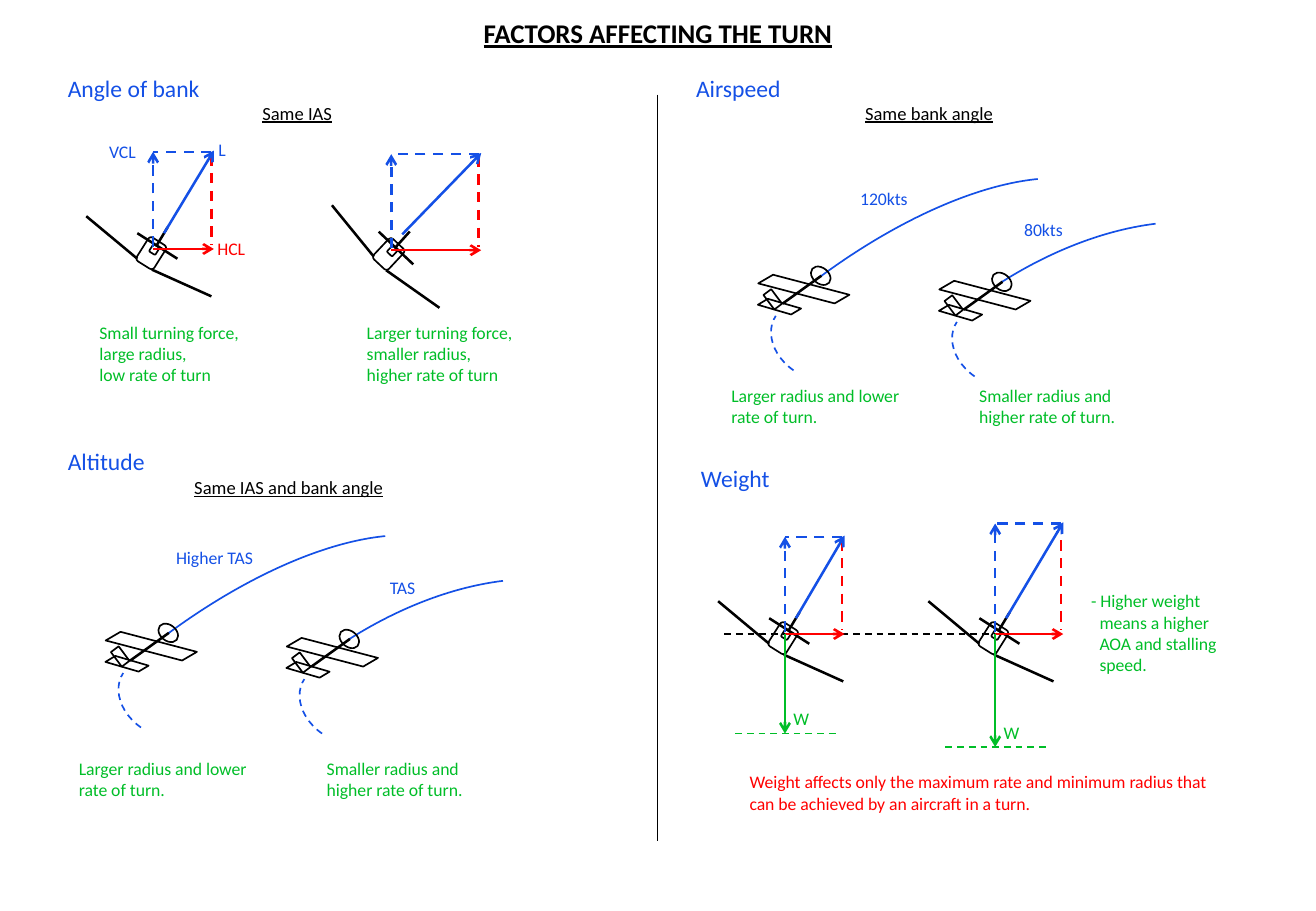
from math import cos, radians, sin

from lxml import etree
from pptx import Presentation
from pptx.dml.color import RGBColor
from pptx.enum.dml import MSO_LINE
from pptx.enum.shapes import MSO_CONNECTOR, MSO_SHAPE
from pptx.enum.text import MSO_AUTO_SIZE, PP_ALIGN
from pptx.oxml.ns import qn
from pptx.util import Inches, Pt

BLACK = RGBColor(0x00, 0x00, 0x00)
BLUE = RGBColor(0x14, 0x50, 0xE6)
GREEN = RGBColor(0x00, 0xBE, 0x28)
RED = RGBColor(0xFF, 0x00, 0x00)
DASH = MSO_LINE.DASH
STRAIGHT = MSO_CONNECTOR.STRAIGHT
ARC = MSO_SHAPE.ARC
ELLIPSE = MSO_SHAPE.OVAL
PARALLELOGRAM = MSO_SHAPE.PARALLELOGRAM
RECT = MSO_SHAPE.RECTANGLE
ROUND_RECT = MSO_SHAPE.ROUNDED_RECTANGLE
CENTER = PP_ALIGN.CENTER
GROW = MSO_AUTO_SIZE.SHAPE_TO_FIT_TEXT

FONT = "Calibri"
BANK = 32.3
STEEP_BANK = 43.3
TAIL_ARC = (162.15, 215.75)
FAST_PATH = (5.48, 2.44, 319.6, (173.29, 206.45))
SLOW_PATH = (4.26, 2.44, 326, (164.53, 196.44))


class TurnSlide:
    def __init__(self, prs):
        self.s = prs.slides.add_slide(prs.slide_layouts[6])

    def text(self, x, y, w, h, text, color, size=10.5, bold=False,
             underline=False, align=None, hanging=0):
        sp = self.s.shapes.add_textbox(Inches(x), Inches(y), Inches(w), Inches(h))
        tf = sp.text_frame
        tf.word_wrap = True
        tf.auto_size = GROW
        tf.text = text
        for i, p in enumerate(tf.paragraphs):
            p.alignment = align
            if hanging and i:
                p._p.get_or_add_pPr().set("marL", str(Inches(hanging)))
            for r in p.runs:
                r.font.name = FONT
                r.font.size = Pt(size)
                r.font.bold = bold
                r.font.underline = underline
                r.font.color.rgb = color

    def stroke(self, line, color, width, dash):
        line.color.rgb = color
        line.width = Pt(width)
        if dash:
            line.dash_style = DASH

    def line(self, x1, y1, x2, y2, color=BLACK, width=1.5, dash=False, arrow=False):
        sp = self.s.shapes.add_connector(
            STRAIGHT, Inches(x1), Inches(y1), Inches(x2), Inches(y2))
        self.stroke(sp.line, color, width, dash)
        if arrow:
            etree.SubElement(sp.line._get_or_add_ln(), qn("a:tailEnd"), type="arrow")
        etree.SubElement(sp._element.spPr, qn("a:effectLst"))

    def shape(self, kind, x, y, w, h, rotation, adjustments=(), color=BLACK, dash=False):
        sp = self.s.shapes.add_shape(kind, Inches(x), Inches(y), Inches(w), Inches(h))
        sp.shadow.inherit = False
        sp.rotation = rotation
        sp.fill.background()
        self.stroke(sp.line, color, 1, dash)
        for i, value in enumerate(adjustments):
            sp.adjustments[i] = value

    def banked_aircraft(self, x, y, bank):
        turn = radians(bank - BANK)

        def rolled(dx, dy):
            return (x + dx * cos(turn) - dy * sin(turn),
                    y + dx * sin(turn) + dy * cos(turn))

        right_wing = (-0.01, 0.17), (0.48, 0.39)
        left_wing = (-0.55, -0.27), (-0.13, 0.08)
        tailplane = (-0.13, -0.13), (0.2, 0.08)
        fin = (0.12, -0.18), (0.03, -0.03)
        for start, end in (right_wing, left_wing, tailplane, fin):
            self.line(*rolled(*start), *rolled(*end))
        for dx, dy, w, h in ((-0.015, 0.035, 0.17, 0.23), (0.01, 0.005, 0.06, 0.07)):
            cx, cy = rolled(dx, dy)
            self.shape(ROUND_RECT, cx - w / 2, cy - h / 2, w, h, bank)

    def lift_forces(self, x, y, w, h):
        side, top = x + w - 0.02, y - h + 0.01
        self.line(side, y - 0.77, side, y - 0.03, RED, dash=True)
        self.line(x, y - 0.02, x, top, BLUE, dash=True, arrow=True)
        self.line(x + 0.09, y - 0.13, x + w, y - h, BLUE, arrow=True)
        self.line(x, y, x + w, y, RED, arrow=True)
        self.line(side, top, x, top, BLUE, dash=True)

    def weight_force(self, x, y, length):
        end = y + length
        self.line(x, y, x, end, GREEN, arrow=True)
        self.line(x - 0.41, end, x + 0.42, end, GREEN, width=1, dash=True)
        self.text(x - 0.03, end - 0.26, 0.49, 0.29, "W", GREEN)

    def turning_aircraft(self, x, y, path_dx, path_dy, path):
        w, h, rotation, sweep = path
        self.shape(ARC, x + path_dx, y + path_dy, w, h, rotation, sweep, BLUE)
        self.shape(ARC, x + 0.08, y + 0.19, 0.75, 0.58, 214.4, TAIL_ARC, BLUE, True)
        self.shape(ELLIPSE, x + 0.45, y - 0.15, 0.13, 0.18, 309.6)
        self.shape(PARALLELOGRAM, x, y, 0.75, 0.1, 14.7, (1,))
        self.shape(PARALLELOGRAM, x, y + 0.16, 0.35, 0.07, 16.3, (0.93,))
        self.shape(RECT, x + 0.08, y + 0.06, 0.08, 0.15, 323.2)
        self.line(x + 0.52, y - 0.06, x + 0.2, y + 0.17)

    def turn_pair(self, x, y, note_y):
        self.turning_aircraft(x, y, -1.77, -0.08, FAST_PATH)
        self.turning_aircraft(x + 1.49, y + 0.05, -1.02, -0.21, SLOW_PATH)
        self.text(x - 0.32, note_y, 1.68, 0.47,
                  "Larger radius and lower rate of turn.", GREEN)
        self.text(x + 1.72, note_y, 1.68, 0.47,
                  "Smaller radius and higher rate of turn.", GREEN)


def main():
    prs = Presentation()
    prs.slide_width = Inches(10.83)
    prs.slide_height = Inches(7.5)
    slide = TurnSlide(prs)

    slide.text(0, 0.09, 10.83, 0.37, "FACTORS AFFECTING THE TURN", BLACK, 16,
               bold=True, underline=True, align=CENTER)
    slide.line(5.41, 0.78, 5.41, 6.92, width=1)

    for x, y, heading in ((0.46, 0.56, "Angle of bank"), (0.46, 3.63, "Altitude"),
                          (5.63, 0.56, "Airspeed"), (5.67, 3.77, "Weight")):
        slide.text(x, y, 1.83, 0.34, heading, BLUE, 14)
    for x, y, condition in ((2.06, 0.79, "Same IAS"), (7.02, 0.79, "Same bank angle"),
                            (1.5, 3.87, "Same IAS and bank angle")):
        slide.text(x, y, 2.51, 0.29, condition, BLACK, 11, underline=True)

    slide.line(5.96, 5.22, 8.19, 5.22, width=1, dash=True)
    for x, y, bank, w, h in ((1.26, 2.05, BANK, 0.5, 0.81),
                             (3.22, 2.06, STEEP_BANK, 0.74, 0.8),
                             (6.46, 5.22, BANK, 0.49, 0.81),
                             (8.19, 5.22, BANK, 0.56, 0.92)):
        slide.banked_aircraft(x, y, bank)
        slide.lift_forces(x, y, w, h)
    slide.weight_force(6.46, 5.22, 0.82)
    slide.weight_force(8.19, 5.22, 0.93)

    slide.turn_pair(0.87, 5.27, 6.19)
    slide.turn_pair(6.24, 2.33, 3.12)

    for x, y, w, label, color in ((0.8, 1.11, 0.49, "VCL", BLUE),
                                  (1.7, 1.09, 0.3, "L", BLUE),
                                  (1.69, 1.91, 0.49, "HCL", RED),
                                  (1.35, 4.45, 1.19, "Higher TAS", BLUE),
                                  (3.11, 4.7, 0.64, "TAS", BLUE),
                                  (6.98, 1.5, 1.19, "120kts", BLUE),
                                  (8.33, 1.75, 0.65, "80kts", BLUE)):
        slide.text(x, y, w, 0.29, label, color)

    slide.text(0.72, 2.6, 1.64, 0.63,
               "Small turning force,\nlarge radius,\nlow rate of turn", GREEN)
    slide.text(2.92, 2.6, 1.67, 0.63,
               "Larger turning force,\nsmaller radius,\nhigher rate of turn", GREEN)
    slide.text(8.88, 4.81, 1.82, 0.81,
               "- Higher weight\nmeans a higher\nAOA and stalling\nspeed.", GREEN,
               hanging=0.07)
    slide.text(6.07, 6.3, 4.07, 0.47,
               "Weight affects only the maximum rate and minimum radius that "
               "can be achieved by an aircraft in a turn.", RED)
    prs.save("out.pptx")


if __name__ == "__main__":
    main()
